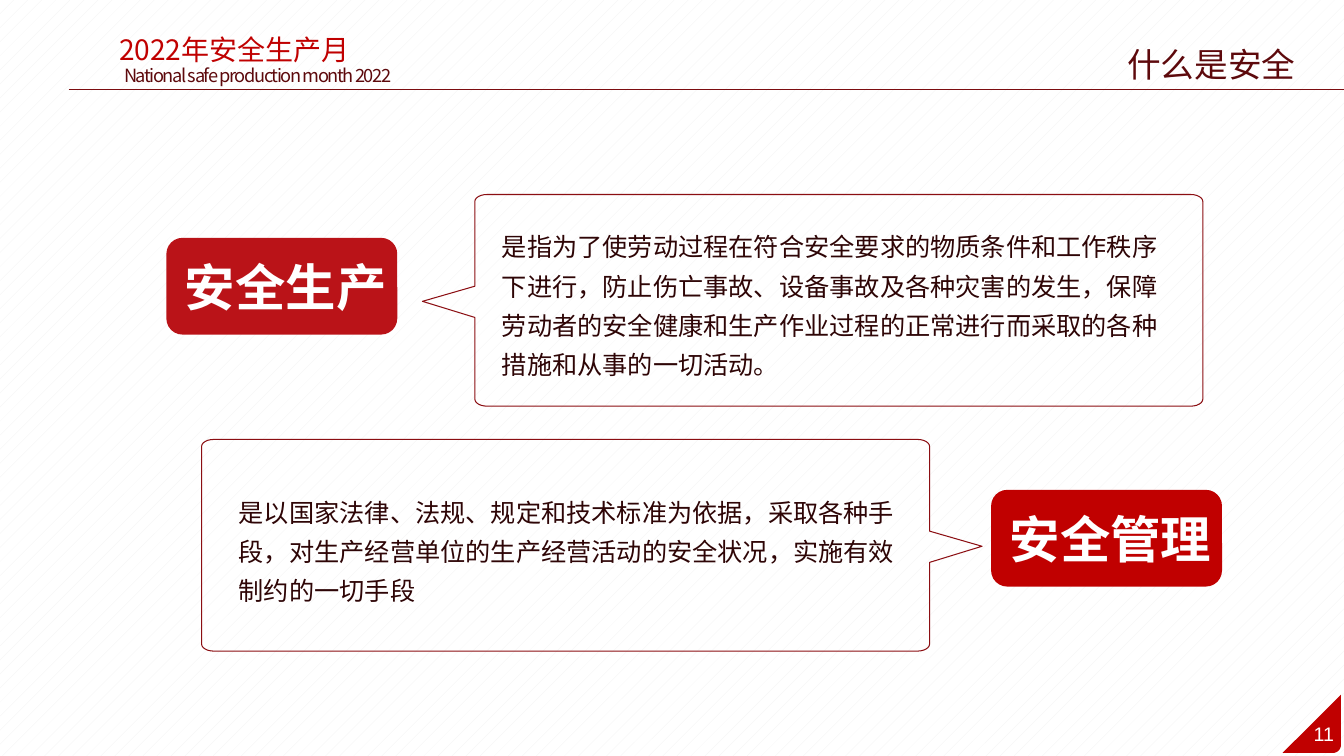
import math

from lxml import etree
from pptx import Presentation
from pptx.dml.color import RGBColor
from pptx.enum.dml import MSO_PATTERN
from pptx.enum.shapes import MSO_CONNECTOR, MSO_SHAPE
from pptx.enum.text import MSO_ANCHOR, MSO_AUTO_SIZE, PP_ALIGN
from pptx.oxml.ns import qn
from pptx.util import Inches, Pt

CENTER, LEFT = PP_ALIGN.CENTER, PP_ALIGN.LEFT
TOP, MIDDLE = MSO_ANCHOR.TOP, MSO_ANCHOR.MIDDLE
STRAIGHT = MSO_CONNECTOR.STRAIGHT
ROUNDED = MSO_SHAPE.ROUNDED_RECTANGLE
DOTS = MSO_PATTERN.PERCENT_5
NO_AUTOFIT = MSO_AUTO_SIZE.NONE

CJK = "Noto Sans CJK SC"
RED, DARK_RED, INK, WHITE = "C00000", "5D090C", "2E0506", "FFFFFF"
LABEL_RED, OUTLINE, RULE = "BA1318", "8B0E12", "7C0D10"

TOPICS = [
    # label, label left, label top, label colour, bubble left, bubble top,
    # tail side (-1 left, 1 right), text left, text top, text height, text
    ("安全生产", 1.65, 2.36, LABEL_RED, 4.71, 1.93, -1, 4.88, 2.16, 1.68,
     "是指为了使劳动过程在符合安全要求的物质条件和工作秩序下进行，防止伤亡事故、"
     "设备事故及各种灾害的发生，保障劳动者的安全健康和生产作业过程的正常进行而采取的"
     "各种措施和从事的一切活动。"),
    ("安全管理", 9.83, 4.86, RED, 2, 4.36, 1, 2.27, 4.79, 1.24,
     "是以国家法律、法规、规定和技术标准为依据，采取各种手段，对生产经营单位的"
     "生产经营活动的安全状况，实施有效制约的一切手段"),
]


def color(hex_text):
    return RGBColor.from_string(hex_text)


def arc(center_x, center_y, radius_x, radius_y, start):
    """Return points of a clockwise quarter ellipse from a start angle in degrees."""
    angles = [math.radians(start + 15 * step) for step in range(7)]
    return [(center_x + radius_x * math.cos(angle), center_y + radius_y * math.sin(angle))
            for angle in angles]


class SlideBuilder:
    def __init__(self, slide):
        self.slide = slide
        self.shapes = slide.shapes

    def background(self, foreground, back):
        fill = self.slide.background.fill
        fill.patterned()
        fill.pattern = DOTS
        fill.fore_color.rgb = color(foreground)
        fill.back_color.rgb = color(back)

    def set_text(self, frame, text, size, text_color, font=CJK, bold=False,
                 align=CENTER, anchor=TOP, wrap=True, line_spacing=None, spacing=None):
        frame.word_wrap = wrap
        frame.auto_size = NO_AUTOFIT
        frame.vertical_anchor = anchor
        paragraph = frame.paragraphs[0]
        paragraph.alignment = align
        if line_spacing:
            paragraph.line_spacing = line_spacing
            paragraph.space_after = Pt(5)
        run = paragraph.add_run()
        run.text = text
        run.font.size = Pt(size)
        run.font.bold = bold
        run.font.name = font
        run.font.color.rgb = color(text_color)
        properties = run.font._element
        etree.SubElement(properties, qn("a:ea")).set("typeface", CJK)
        if spacing:
            properties.set("spc", str(spacing))

    def text(self, left, top, width, height, text, size, text_color, **style):
        box = self.shapes.add_textbox(Inches(left), Inches(top), Inches(width), Inches(height))
        self.set_text(box.text_frame, text, size, text_color, **style)

    def title(self, left, top, width, height, text, size, text_color):
        title = self.shapes.title
        title.left, title.top = Inches(left), Inches(top)
        title.width, title.height = Inches(width), Inches(height)
        self.set_text(title.text_frame, text, size, text_color, anchor=MIDDLE)

    def rule(self, left, top, right, line_color):
        line = self.shapes.add_connector(
            STRAIGHT, Inches(left), Inches(top), Inches(right), Inches(top))
        line.line.color.rgb = color(line_color)
        line.line.width = Pt(0.75)
        etree.SubElement(line._element.spPr, qn("a:effectLst"))

    def outline(self, points, fill=None, line=None):
        (start_x, start_y), *rest = [(Inches(x), Inches(y)) for x, y in points]
        builder = self.shapes.build_freeform(start_x, start_y)
        builder.add_line_segments(rest, close=True)
        shape = builder.convert_to_shape()
        shape.shadow.inherit = False
        if fill:
            shape.fill.solid()
            shape.fill.fore_color.rgb = color(fill)
        else:
            shape.fill.background()
        if line:
            shape.line.color.rgb = color(line)
            shape.line.width = Pt(0.75)
        else:
            shape.line.fill.background()

    def bubble(self, left, top, side):
        """Draw a rounded callout whose tail points left (-1) or right (1)."""
        half, height, tail = 3.61, 2.1, 0.52
        radius_x, radius_y = 0.12, 0.07
        near, far = half - radius_x, height - radius_y
        points = (arc(-near, radius_y, radius_x, radius_y, 180)
                  + arc(near, radius_y, radius_x, radius_y, 270)
                  + [(half, 0.91), (half + tail, 1.06), (half, 1.22)]
                  + arc(near, far, radius_x, radius_y, 0)
                  + arc(-near, far, radius_x, radius_y, 90))
        center = left + half
        self.outline([(center + side * x, top + y) for x, y in points], line=OUTLINE)

    def label(self, left, top, text, fill):
        shape = self.shapes.add_shape(
            ROUNDED, Inches(left), Inches(top), Inches(2.29), Inches(0.96))
        shape.shadow.inherit = False
        shape.fill.solid()
        shape.fill.fore_color.rgb = color(fill)
        shape.line.fill.background()
        frame = shape.text_frame
        frame.margin_left, frame.margin_right = Inches(0.1), Inches(0.02)
        self.set_text(frame, text, 36, WHITE, font="Calibri", bold=True,
                      anchor=MIDDLE, wrap=False)

    def page_corner(self, number):
        right, bottom, size, radius = 13.3, 7.47, 0.58, 0.08
        corner = arc(right - radius, bottom - radius, radius, radius, 0)
        self.outline([(right, bottom - size), *corner, (right - size, bottom)], fill=RED)
        self.text(12.91, 7.11, 0.44, 0.34, number, 14, WHITE, font="Arial", wrap=False)


def main():
    presentation = Presentation()
    presentation.slide_width, presentation.slide_height = Inches(13.33), Inches(7.5)
    builder = SlideBuilder(presentation.slides.add_slide(presentation.slide_layouts[5]))
    builder.background("F2F2F2", WHITE)
    builder.rule(0.68, 0.89, 13.33, RULE)
    builder.page_corner("11")
    builder.text(0.61, 0.27, 3.43, 0.44, "2022年安全生产月", 20, RED)
    builder.text(1.1, 0.59, 2.91, 0.32, "National safe production month 2022", 13, DARK_RED,
                 wrap=False, spacing=-100)
    builder.title(10.7, 0.39, 2.63, 0.5, "什么是安全", 24, DARK_RED)
    for (label, label_left, label_top, fill, bubble_left, bubble_top, side,
         text_left, text_top, text_height, text) in TOPICS:
        builder.label(label_left, label_top, label, fill)
        builder.bubble(bubble_left, bubble_top, side)
        builder.text(text_left, text_top, 6.83, text_height, text, 18, INK,
                     align=LEFT, line_spacing=1.3)
    presentation.save("out.pptx")


if __name__ == "__main__":
    main()
